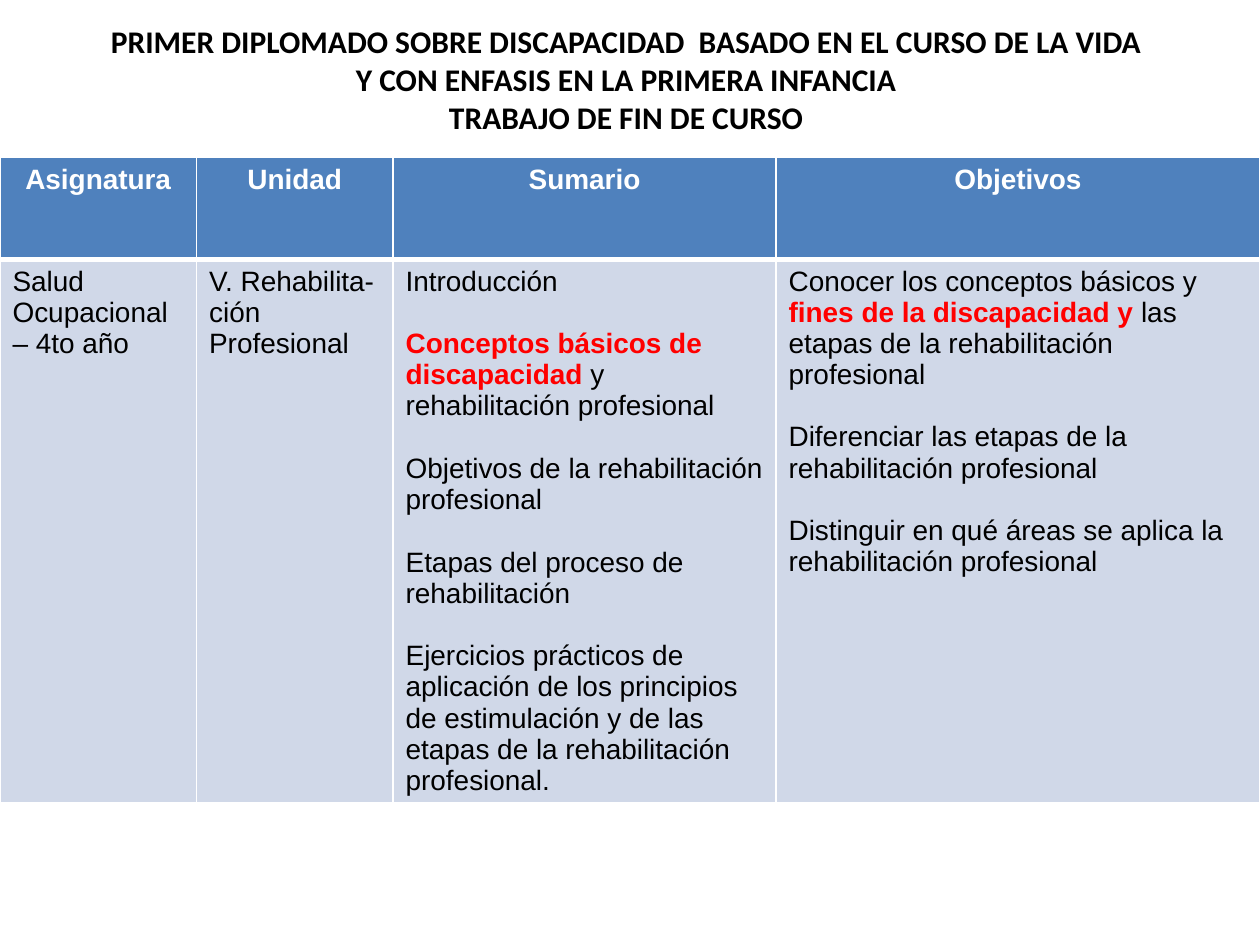
from dataclasses import dataclass

from lxml import etree
from pptx import Presentation
from pptx.dml.color import RGBColor
from pptx.enum.text import MSO_ANCHOR, PP_ALIGN
from pptx.oxml.ns import qn
from pptx.util import Inches, Pt

CENTER, LEFT = PP_ALIGN.CENTER, PP_ALIGN.LEFT
MIDDLE = MSO_ANCHOR.MIDDLE


@dataclass(frozen=True)
class Theme:
    head: str = "4F81BD"
    body: str = "D0D8E8"
    light: str = "FFFFFF"
    dark: str = "000000"
    accent: str = "FF0000"
    title_font: str = "Calibri"
    cell_font: str = "Arial"
    title_size: int = 18
    cell_size: int = 16
    gap: int = 18
    thin: int = 1
    thick: int = 3


TITLE = [
    "PRIMER DIPLOMADO SOBRE DISCAPACIDAD  BASADO EN EL CURSO DE LA VIDA",
    "Y CON ENFASIS EN LA PRIMERA INFANCIA",
    "TRABAJO DE FIN DE CURSO",
]
WIDTHS = [1.56, 1.56, 3.04, 3.84]
HEIGHTS = [0.81, 4.29]
HEADS = ["Asignatura", "Unidad", "Sumario", "Objetivos"]
BODY = [
    ["Salud Ocupacional – 4to año"],
    ["V. Rehabilita-ción Profesional"],
    [
        "Introducción",
        ["", "Conceptos básicos de discapacidad ", "y rehabilitación profesional"],
        "Objetivos de la rehabilitación profesional",
        "Etapas del proceso de rehabilitación",
        "Ejercicios prácticos de aplicación de los principios de estimulación "
        "y de las etapas de la rehabilitación profesional.",
    ],
    [
        ["Conocer los conceptos básicos y ", "fines de la discapacidad y ",
         "las etapas de la rehabilitación profesional"],
        "Diferenciar las etapas de la rehabilitación profesional",
        "Distinguir en qué áreas se aplica la rehabilitación profesional",
    ],
]


class Page:
    def __init__(self, slide, theme):
        self.slide = slide
        self.theme = theme

    def style(self, font, name, size, color, bold):
        font.name, font.size, font.bold = name, Pt(size), bold
        font.color.rgb = RGBColor.from_string(color)

    def title(self, lines, left, top, width, height):
        box = self.slide.shapes.add_textbox(
            Inches(left), Inches(top), Inches(width), Inches(height))
        frame = box.text_frame
        frame.word_wrap = True
        frame.vertical_anchor = MIDDLE
        para = frame.paragraphs[0]
        para.text = "\v".join(lines)
        para.alignment = CENTER
        t = self.theme
        self.style(para.font, t.title_font, t.title_size, t.dark, True)

    def table(self, heads, body, left, top, widths, heights):
        shape = self.slide.shapes.add_table(
            len(heights), len(widths), Inches(left), Inches(top),
            Inches(sum(widths)), Inches(sum(heights)))
        grid = shape.table
        for col, width in zip(grid.columns, widths):
            col.width = Inches(width)
        for row, height in zip(grid.rows, heights):
            row.height = Inches(height)
        t = self.theme
        for i, (head, paras) in enumerate(zip(heads, body)):
            self.cell(grid.cell(0, i), [head], t.head, t.light, True, CENTER,
                      {"B": t.thick})
            self.cell(grid.cell(1, i), paras, t.body, t.dark, False, LEFT,
                      {"T": t.thick})

    def cell(self, cell, paras, fill, color, bold, align, edges):
        t = self.theme
        self.border(cell, edges)
        cell.fill.solid()
        cell.fill.fore_color.rgb = RGBColor.from_string(fill)
        frame = cell.text_frame
        for i, parts in enumerate(paras):
            para = frame.add_paragraph() if i else frame.paragraphs[0]
            para.alignment = align
            para.space_before = Pt(t.gap if i else 0)
            self.style(para.font, t.cell_font, t.cell_size, color, bold)
            if isinstance(parts, str):
                parts = [parts]
            for j, text in enumerate(parts):
                if text:
                    run = para.add_run()
                    run.text = text
                    if j == 1:
                        run.font.bold = True
                        run.font.color.rgb = RGBColor.from_string(t.accent)

    def border(self, cell, edges):
        props = cell._tc.get_or_add_tcPr()
        for side in "LRTB":
            width = edges.get(side, self.theme.thin)
            line = etree.SubElement(props, qn(f"a:ln{side}"), w=str(Pt(width)))
            fill = etree.SubElement(line, qn("a:solidFill"))
            etree.SubElement(fill, qn("a:srgbClr"), val=self.theme.light)


def main():
    deck = Presentation()
    deck.slide_width, deck.slide_height = Inches(10), Inches(7.5)
    page = Page(deck.slides.add_slide(deck.slide_layouts[6]), Theme())
    page.table(HEADS, BODY, 0, 1.25, WIDTHS, HEIGHTS)
    page.title(TITLE, 0.47, 0, 9, 1.25)
    deck.save("out.pptx")


if __name__ == "__main__":
    main()
